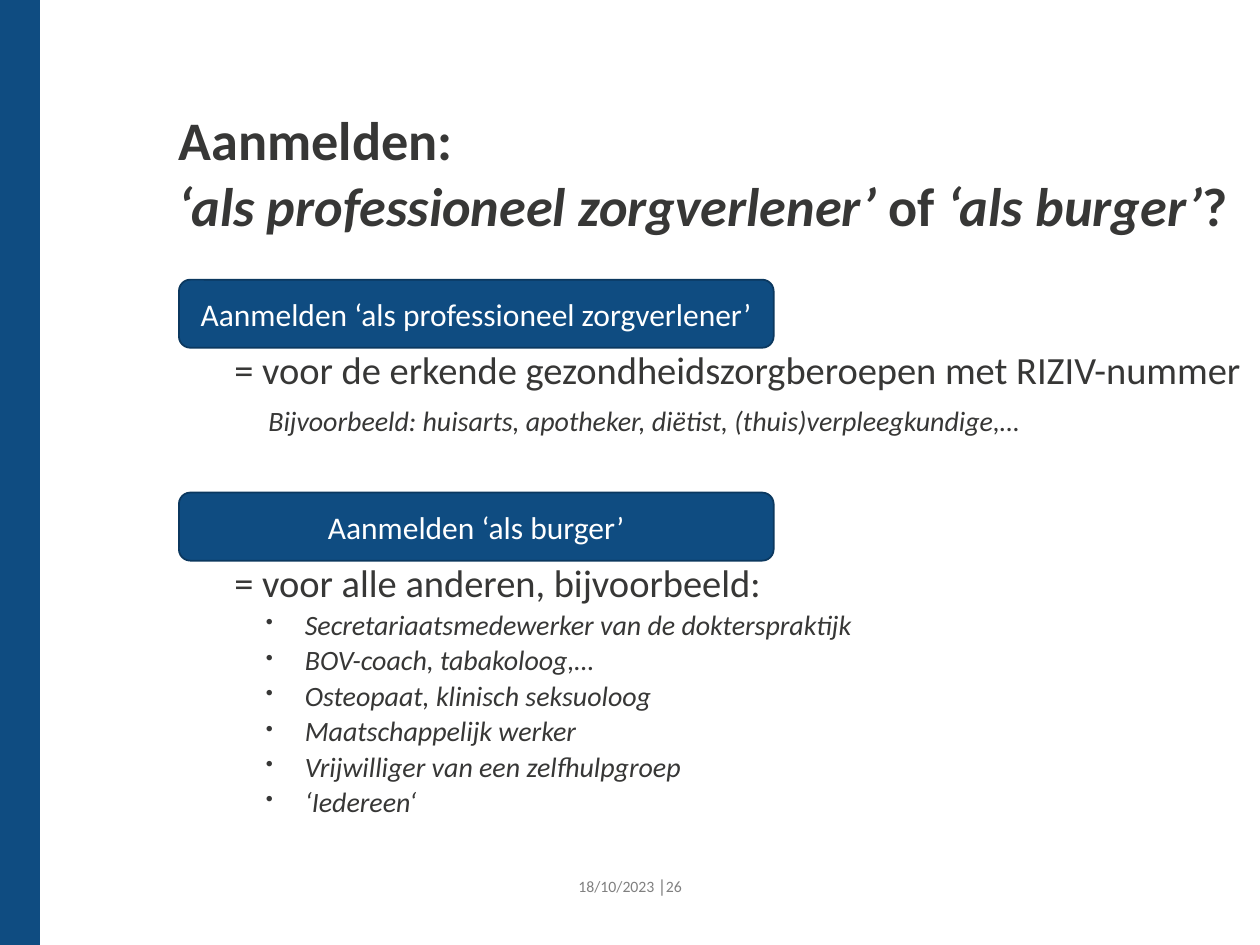
import pptx
import pptx.util
import pptx.dml.color
import pptx.enum.shapes
import pptx.enum.text
import pptx.oxml.ns
import lxml.etree

Inches = pptx.util.Inches
Pt = pptx.util.Pt
ALIGN = pptx.enum.text.PP_ALIGN
ANCHOR = pptx.enum.text.MSO_ANCHOR
SHAPE = pptx.enum.shapes.MSO_SHAPE

COLORS = {"blue": "0F4C81", "edge": "0B385F", "text": "373736", "grey": "808080", "white": "FFFFFF"}
FORMATS = {
    "title": {"size": Pt(31), "bold": True},
    "quote": {"size": Pt(31), "bold": True, "italic": True},
    "button": {"size": Pt(18)},
    "lead": {"size": Pt(22)},
    "example": {"size": Pt(16), "italic": True},
    "footer": {"size": Pt(9)},
    "divider": {"size": Pt(9), "bold": True},
}
PARAGRAPHS = {
    "lead": {"indent": 0.07, "hanging": 0, "before": 0},
    "example": {"indent": 0.34, "hanging": 0, "before": 8},
    "bullet": {"indent": 0.63, "hanging": 0.31, "before": 3},
}

TITLE = [
    [("Aanmelden:", "title")],
    [("‘als professioneel zorgverlener’", "quote"), (" of ", "title"),
     ("‘als burger’", "quote"), ("?", "title")],
]
FOOTER = [("18/10/2023 ", "footer"), ("│", "divider"), ("26", "footer")]
SECTIONS = [
    {
        "button": "Aanmelden ‘als professioneel zorgverlener’",
        "top": 2.22,
        "body": [
            ("= voor de erkende gezondheidszorgberoepen met RIZIV-nummer", "lead"),
            ("Bijvoorbeeld: huisarts, apotheker, diëtist, (thuis)verpleegkundige,…", "example"),
        ],
    },
    {
        "button": "Aanmelden ‘als burger’",
        "top": 3.91,
        "body": [
            ("= voor alle anderen, bijvoorbeeld:", "lead"),
            ("Secretariaatsmedewerker van de dokterspraktijk", "bullet"),
            ("BOV-coach, tabakoloog,…", "bullet"),
            ("Osteopaat, klinisch seksuoloog", "bullet"),
            ("Maatschappelijk werker", "bullet"),
            ("Vrijwilliger van een zelfhulpgroep", "bullet"),
            ("‘Iedereen‘", "bullet"),
        ],
    },
]
LEFT = 1.42
BODY_LEFT = 1.79
RIGHT = 9.92
BUTTON_HEIGHT = 0.54
BODY_GAP = 0.03


def rgb(name):
    return pptx.dml.color.RGBColor.from_string(COLORS[name])


def add_run(paragraph, text, style, color):
    run = paragraph.add_run()
    run.text = text
    run.font.name = "Calibri"
    run.font.color.rgb = rgb(color)
    for attribute, value in FORMATS[style].items():
        setattr(run.font, attribute, value)


def add_box(slide, left, top, width, height, margin=0):
    box = slide.shapes.add_textbox(Inches(left), Inches(top), Inches(width), Inches(height))
    frame = box.text_frame
    frame.word_wrap = True
    for side in ("left", "top", "right", "bottom"):
        setattr(frame, f"margin_{side}", Inches(margin))
    return frame


def add_panel(slide, kind, left, top, width, height, line):
    shape = slide.shapes.add_shape(kind, Inches(left), Inches(top), Inches(width), Inches(height))
    shape.shadow.inherit = False
    shape.fill.solid()
    shape.fill.fore_color.rgb = rgb("blue")
    shape.line.color.rgb = rgb(line)
    shape.line.width = Pt(1)
    return shape


def format_paragraph(paragraph, kind):
    layout = PARAGRAPHS[kind]
    properties = paragraph._p.get_or_add_pPr()
    properties.set("marL", str(Inches(layout["indent"])))
    properties.set("indent", str(-Inches(layout["hanging"])))
    paragraph.line_spacing = 0.9
    paragraph.space_before = Pt(layout["before"])
    if kind == "bullet":
        for tag, attribute, value in (("a:buSzPct", "val", "75000"), ("a:buChar", "char", "•")):
            element = lxml.etree.SubElement(properties, pptx.oxml.ns.qn(tag))
            element.set(attribute, value)


def add_section(slide, section):
    button = add_panel(slide, SHAPE.ROUNDED_RECTANGLE, LEFT, section["top"], 4.72, BUTTON_HEIGHT, "edge")
    frame = button.text_frame
    frame.word_wrap = True
    frame.vertical_anchor = ANCHOR.MIDDLE
    frame.paragraphs[0].alignment = ALIGN.CENTER
    add_run(frame.paragraphs[0], section["button"], "button", "white")

    body_top = section["top"] + BUTTON_HEIGHT + BODY_GAP
    body = add_box(slide, BODY_LEFT, body_top, RIGHT - BODY_LEFT, 0.76)
    for index, (text, kind) in enumerate(section["body"]):
        paragraph = body.add_paragraph() if index else body.paragraphs[0]
        format_paragraph(paragraph, kind)
        add_run(paragraph, text, "lead" if kind == "lead" else "example", "text")


def main():
    presentation = pptx.Presentation()
    presentation.slide_width = Inches(10)
    presentation.slide_height = Inches(7.5)
    slide = presentation.slides.add_slide(presentation.slide_layouts[6])

    add_panel(slide, SHAPE.RECTANGLE, 0, 0, 0.31, 7.5, "blue")

    title = add_box(slide, LEFT, 0.83, RIGHT - LEFT, 1.22).paragraphs[0]
    title.line_spacing = Pt(38)
    for index, line in enumerate(TITLE):
        if index:
            title.add_line_break()
        for text, style in line:
            add_run(title, text, style, "text")

    for section in SECTIONS:
        add_section(slide, section)

    footer = add_box(slide, 4.33, 6.83, 1.18, 0.4, 0.1)
    footer.vertical_anchor = ANCHOR.MIDDLE
    footer.paragraphs[0].alignment = ALIGN.RIGHT
    for text, style in FOOTER:
        add_run(footer.paragraphs[0], text, style, "grey")

    presentation.save("out.pptx")


if __name__ == "__main__":
    main()
